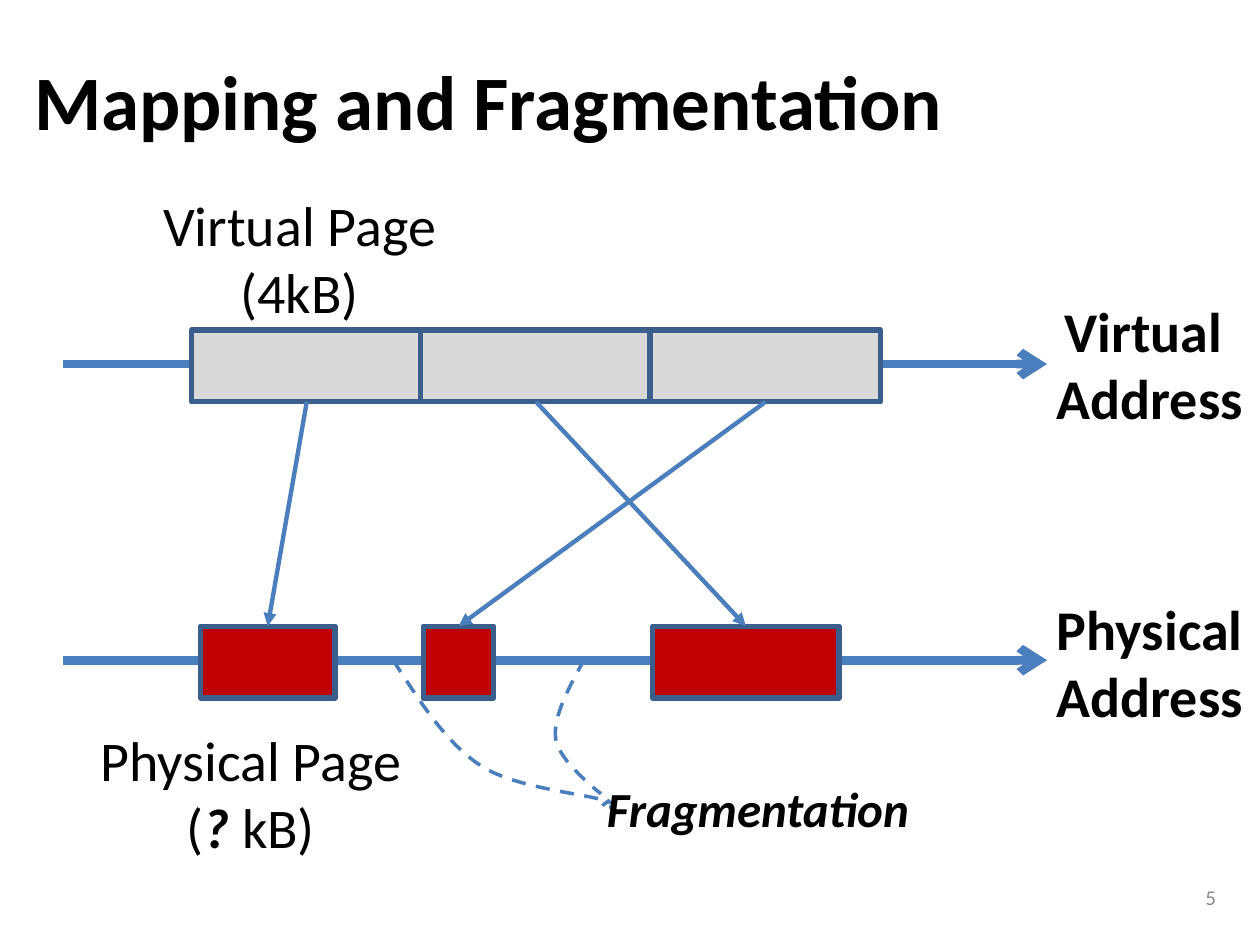
from typing import NamedTuple

from lxml.etree import SubElement
from pptx import Presentation
from pptx.dml.color import RGBColor
from pptx.enum.dml import MSO_LINE
from pptx.enum.shapes import MSO_CONNECTOR, MSO_SHAPE
from pptx.enum.text import MSO_ANCHOR, PP_ALIGN
from pptx.oxml.ns import qn
from pptx.util import Inches, Pt

BLACK = RGBColor(0x00, 0x00, 0x00)
GRAY = RGBColor(0x8C, 0x8C, 0x8C)
LIGHT_GRAY = RGBColor(0xD9, 0xD9, 0xD9)
RED = RGBColor(0xC0, 0x00, 0x00)
BLUE = RGBColor(0x4B, 0x7E, 0xBC)
DARK_BLUE = RGBColor(0x3A, 0x5F, 0x8C)

PAGE_HEIGHT = 0.57
VIRTUAL_TOP, PHYSICAL_TOP = 2.62, 4.97
AXIS_LEFT, AXIS_RIGHT, AXIS_DROP = 0.5, 8.31, 0.27
CURVE_STEPS = 16


class Span(NamedTuple):
    text: str
    bold: bool = False
    italic: bool = False


class Label(NamedTuple):
    left: float
    top: float
    width: float
    height: float
    lines: list[list[Span]]
    size: int = 32
    color: RGBColor = BLACK
    align: PP_ALIGN = PP_ALIGN.CENTER
    anchor: MSO_ANCHOR = MSO_ANCHOR.TOP


class MemoryPage(NamedTuple):
    left: float
    top: float
    width: float
    color: RGBColor


def write_line(para, spans: list[Span], size: int, color: RGBColor, align) -> None:
    para.alignment = align
    for span in spans:
        run = para.add_run()
        run.text = span.text
        font = run.font
        font.name, font.size = "Calibri", Pt(size)
        font.bold, font.italic = span.bold, span.italic
        font.color.rgb = color


def add_label(slide, label: Label) -> None:
    box = slide.shapes.add_textbox(*map(Inches, label[:4]))
    frame = box.text_frame
    frame.word_wrap = True
    frame.vertical_anchor = label.anchor
    for index, spans in enumerate(label.lines):
        para = frame.add_paragraph() if index else frame.paragraphs[0]
        write_line(para, spans, label.size, label.color, label.align)


def add_page(slide, page: MemoryPage):
    rect = slide.shapes.add_shape(
        MSO_SHAPE.RECTANGLE, Inches(page.left), Inches(page.top),
        Inches(page.width), Inches(PAGE_HEIGHT))
    rect.shadow.inherit = False
    rect.fill.solid()
    rect.fill.fore_color.rgb = page.color
    rect.line.color.rgb = DARK_BLUE
    rect.line.width = Pt(3)
    return rect


def add_arrow(slide, start: tuple, end: tuple, width: float, head: str):
    arrow = slide.shapes.add_connector(
        MSO_CONNECTOR.STRAIGHT, *map(Inches, start + end))
    arrow.line.color.rgb = BLUE
    arrow.line.width = Pt(width)
    SubElement(arrow.line._get_or_add_ln(), qn("a:tailEnd"), type=head)
    SubElement(arrow._element.spPr, qn("a:effectLst"))
    return arrow


def bezier(start: tuple, curve: tuple) -> list[tuple]:
    """Points along a cubic curve, without its start."""
    first, second, end = curve
    points = []
    for step in range(1, CURVE_STEPS + 1):
        t = step / CURVE_STEPS
        weights = ((1 - t) ** 3, 3 * t * (1 - t) ** 2, 3 * t * t * (1 - t), t ** 3)
        points.append(tuple(
            Inches(sum(w * p[axis] for w, p in zip(weights, (start, first, second, end))))
            for axis in (0, 1)))
    return points


def add_dashed_curve(slide, start: tuple, curves: list[tuple]) -> None:
    builder = slide.shapes.build_freeform(*map(Inches, start))
    for curve in curves:
        builder.add_line_segments(bezier(start, curve), close=False)
        start = curve[-1]
    shape = builder.convert_to_shape()
    shape.shadow.inherit = False
    shape.fill.background()
    shape.line.color.rgb = BLUE
    shape.line.width = Pt(2)
    shape.line.dash_style = MSO_LINE.DASH


def main() -> None:
    deck = Presentation()
    deck.slide_width, deck.slide_height = Inches(10), Inches(7.5)
    slide = deck.slides.add_slide(deck.slide_layouts[5])

    # Title
    title = slide.shapes.title
    title.left, title.top = Inches(0.17), Inches(0.17)
    title.width, title.height = Inches(9), Inches(1.25)
    title.text_frame.vertical_anchor = MSO_ANCHOR.MIDDLE
    write_line(title.text_frame.paragraphs[0],
               [Span("Mapping and Fragmentation", bold=True)], 44, BLACK, PP_ALIGN.LEFT)

    # Address axes with their pages
    virtual = [MemoryPage(1.52 + 1.82 * i, VIRTUAL_TOP, 1.83, LIGHT_GRAY)
               for i in range(3)]
    physical = [MemoryPage(left, PHYSICAL_TOP, width, RED)
                for left, width in ((1.59, 1.07), (3.36, 0.56), (5.18, 1.48))]
    rows = []
    for pages in (virtual, physical):
        axis = pages[0].top + AXIS_DROP
        add_arrow(slide, (AXIS_LEFT, axis), (AXIS_RIGHT, axis), 5, "arrow")
        rows.append([add_page(slide, page) for page in pages])

    # Mapping: bottom of each virtual page to top of its physical page
    for source, target in ((0, 0), (2, 1), (1, 2)):
        arrow = add_arrow(slide, (0, 0), (1, 1), 2.5, "triangle")
        arrow.begin_connect(rows[0][source], 2)
        arrow.end_connect(rows[1][target], 0)

    # Dashed pointers to the gaps
    add_dashed_curve(slide, (4.64, 5.23), [
        ((4.52, 5.45), (4.39, 5.68), (4.41, 5.86)),
        ((4.43, 6.04), (4.77, 6.3), (4.77, 6.3))])
    add_dashed_curve(slide, (3.12, 5.24), [
        ((3.33, 5.56), (3.53, 5.89), (3.82, 6.08)),
        ((4.1, 6.26), (4.66, 6.3), (4.82, 6.36)),
        ((4.98, 6.41), (4.77, 6.41), (4.77, 6.41)),
        ((4.77, 6.4), (4.8, 6.38), (4.84, 6.35))])

    # Labels and page number
    labels = [
        Label(0.96, 1.46, 2.94, 1.18, [[Span("Virtual Page ")], [Span("(4kB) ")]]),
        Label(0.29, 5.71, 3.5, 1.18, [
            [Span("Physical Page ")],
            [Span("("), Span("? ", bold=True, italic=True), Span("kB) ")]]),
        Label(4.14, 6.13, 3.75, 0.57,
              [[Span("Fragmentation", bold=True, italic=True)]], size=28),
        Label(7.42, 6.92, 2.33, 0.4, [[Span("5")]], size=12, color=GRAY,
              align=PP_ALIGN.RIGHT, anchor=MSO_ANCHOR.MIDDLE),
    ]
    for name, top in (("Virtual ", 2.3), ("Physical ", 4.67)):
        labels.append(Label(8.25, top, 1.75, 1.18,
                            [[Span(name, bold=True)], [Span("Address", bold=True)]]))
    for label in labels:
        add_label(slide, label)

    deck.save("out.pptx")


if __name__ == "__main__":
    main()
